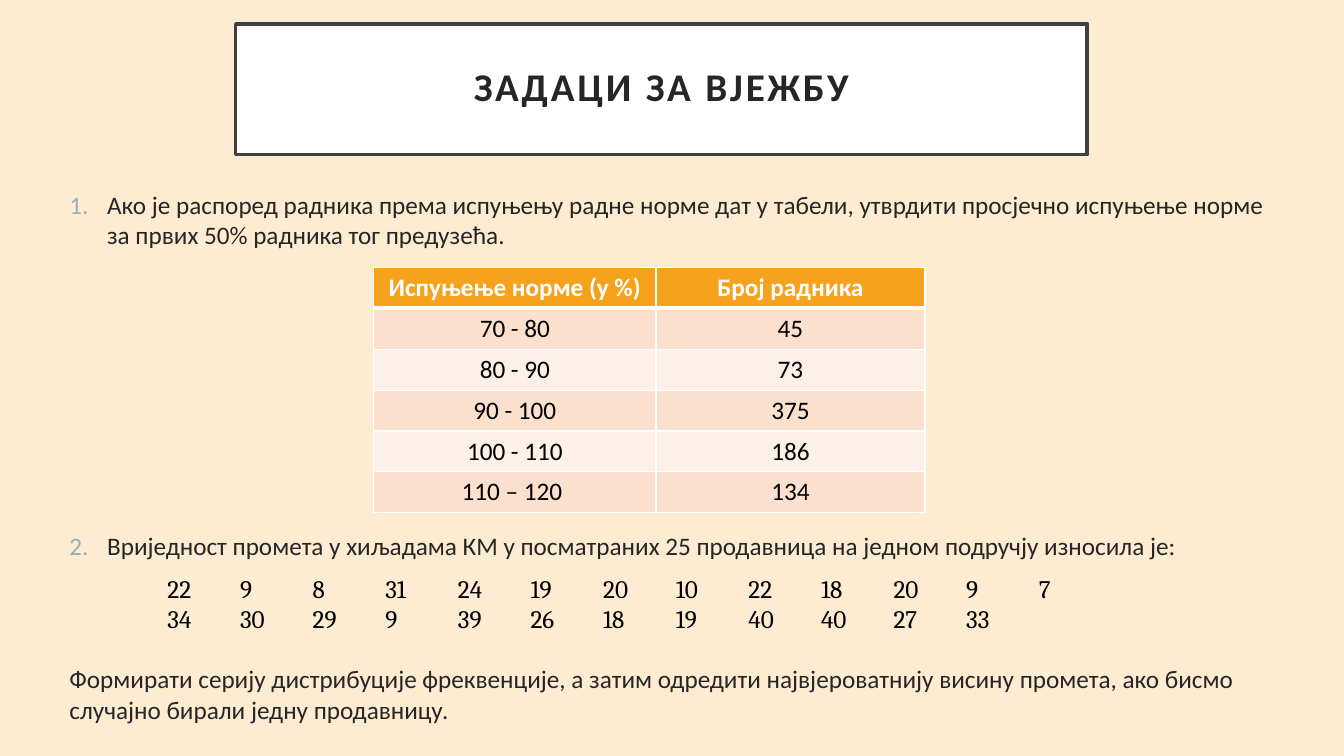
import pptx
import pptx.dml.color
import pptx.enum.shapes
import pptx.enum.text
import pptx.oxml.ns
import pptx.util
from lxml import etree
from pptx.util import Cm

INK = "262626"
WHITE = "FFFFFF"
ORANGE = "F6A21D"
BANDS = ("FBE0CD", "FDF0E8")
NO_GRID_STYLE = "{2D5ABB26-0587-4C30-8999-92F81FD0307C}"
CENTER = pptx.enum.text.PP_ALIGN.CENTER
MIDDLE = pptx.enum.text.MSO_ANCHOR.MIDDLE

NORMS = (
    ("Испуњење норме (у %)", "Број радника"),
    ("70 - 80", "45"),
    ("80 - 90", "73"),
    ("90 - 100", "375"),
    ("100 - 110", "186"),
    ("110 – 120 ", "134"),
)
TURNOVER = (
    (22, 9, 8, 31, 24, 19, 20, 10, 22, 18, 20, 9, 7),
    (34, 30, 29, 9, 39, 26, 18, 19, 40, 40, 27, 33, ""),
)


def rgb(color):
    return pptx.dml.color.RGBColor.from_string(color)


def add_xml(parent, tag, **attributes):
    return etree.SubElement(parent, pptx.oxml.ns.qn(tag), attributes)


def write_text(frame, text, size=18, font="Calibri", color=INK, bold=False,
               align=None, line_spacing=None, tracking=None):
    """Fill the first paragraph of a text frame and return that paragraph."""
    paragraph = frame.paragraphs[0]
    paragraph.alignment = align
    paragraph.line_spacing = line_spacing
    run = paragraph.add_run()
    run.text = text
    run.font.size = pptx.util.Pt(size)
    run.font.name = font
    run.font.bold = bold
    run.font.color.rgb = rgb(color)
    if tracking:
        run.font._element.set("spc", str(tracking * 100))
    return paragraph


def add_title(slide, text):
    shape = slide.shapes.add_shape(
        pptx.enum.shapes.MSO_SHAPE.RECTANGLE,
        Cm(5.94), Cm(0.6), Cm(21.46), Cm(3.3))
    shape.shadow.inherit = False
    shape.fill.solid()
    shape.fill.fore_color.rgb = rgb(WHITE)
    shape.line.color.rgb = rgb("404040")
    shape.line.width = pptx.util.Pt(2.5)
    shape.text_frame.vertical_anchor = MIDDLE
    write_text(shape.text_frame, text, size=28, bold=True, align=CENTER,
               line_spacing=0.9, tracking=2)


def add_task_text(slide, top, height, text, number=None):
    box = slide.shapes.add_textbox(Cm(1.5), Cm(top), Cm(31.19), Cm(height))
    box.text_frame.word_wrap = True
    paragraph = write_text(box.text_frame, text)
    if number:
        properties = paragraph._p.get_or_add_pPr()
        properties.set("marL", str(Cm(0.95)))
        properties.set("indent", str(-Cm(0.95)))
        add_xml(add_xml(properties, "a:buClr"), "a:srgbClr", val="9BAFB5")
        add_xml(properties, "a:buFont", typeface="+mj-lt")
        add_xml(properties, "a:buAutoNum", type="arabicPeriod",
                startAt=str(number))


def add_plain_table(slide, left, top, column_widths, row_height, row_count):
    """Add a table without style, banding or grid."""
    frame = slide.shapes.add_table(
        row_count, len(column_widths), Cm(left), Cm(top),
        Cm(sum(column_widths)), Cm(row_height * row_count))
    table = frame.table
    table.first_row = table.horz_banding = False
    table._tbl.tblPr.find(pptx.oxml.ns.qn("a:tableStyleId")).text = NO_GRID_STYLE
    for column, width in zip(table.columns, column_widths):
        column.width = Cm(width)
    for row in table.rows:
        row.height = Cm(row_height)
    return table


def set_borders(cell, top=1, bottom=1):
    properties = cell._tc.get_or_add_tcPr()
    for side, width in (("L", 1), ("R", 1), ("T", top), ("B", bottom)):
        line = add_xml(properties, f"a:ln{side}", w=str(pptx.util.Pt(width)))
        add_xml(add_xml(line, "a:solidFill"), "a:srgbClr", val=WHITE)


def add_norm_table(slide):
    table = add_plain_table(slide, 9.42, 6.74, (7.11, 6.78), 1.03, len(NORMS))
    for row, values in enumerate(NORMS):
        header = row == 0
        for column, value in enumerate(values):
            cell = table.cell(row, column)
            set_borders(cell, top=3 if row == 1 else 1,
                        bottom=3 if header else 1)
            cell.fill.solid()
            cell.fill.fore_color.rgb = rgb(
                ORANGE if header else BANDS[(row - 1) % 2])
            cell.vertical_anchor = MIDDLE
            write_text(cell.text_frame, value, bold=header, align=CENTER,
                       color=WHITE if header else "000000")


def add_turnover_table(slide):
    widths = [1.83] * len(TURNOVER[0])
    table = add_plain_table(slide, 4.04, 14.5, widths, 0.76, len(TURNOVER))
    for row, values in enumerate(TURNOVER):
        for column, value in enumerate(values):
            cell = table.cell(row, column)
            cell.fill.background()
            cell.margin_left = cell.margin_right = Cm(0.18)
            cell.margin_top = cell.margin_bottom = 0
            write_text(cell.text_frame, str(value), font="Cambria",
                       color="000000")


def main():
    presentation = pptx.Presentation()
    presentation.slide_width = Cm(33.87)
    presentation.slide_height = Cm(19.05)
    slide = presentation.slides.add_slide(presentation.slide_layouts[6])
    slide.background.fill.solid()
    slide.background.fill.fore_color.rgb = rgb("FDECD2")

    add_title(slide, "ЗАДАЦИ ЗА ВЈЕЖБУ")
    add_task_text(
        slide, 4.65, 1.8,
        "Ако је распоред радника према испуњењу радне норме дат у табели, "
        "утврдити просјечно испуњење норме за првих 50% радника тог предузећа.",
        number=1)
    add_norm_table(slide)
    add_task_text(
        slide, 13.25, 1.03,
        "Вриједност промета у хиљадама КМ у посматраних 25 продавница "
        "на једном подручју износила је:",
        number=2)
    add_turnover_table(slide)
    add_task_text(
        slide, 16.6, 1.8,
        "Формирати серију дистрибуције фреквенције, а затим одредити "
        "највјероватнију висину промета, ако бисмо случајно бирали "
        "једну продавницу.")
    presentation.save("out.pptx")


if __name__ == "__main__":
    main()
